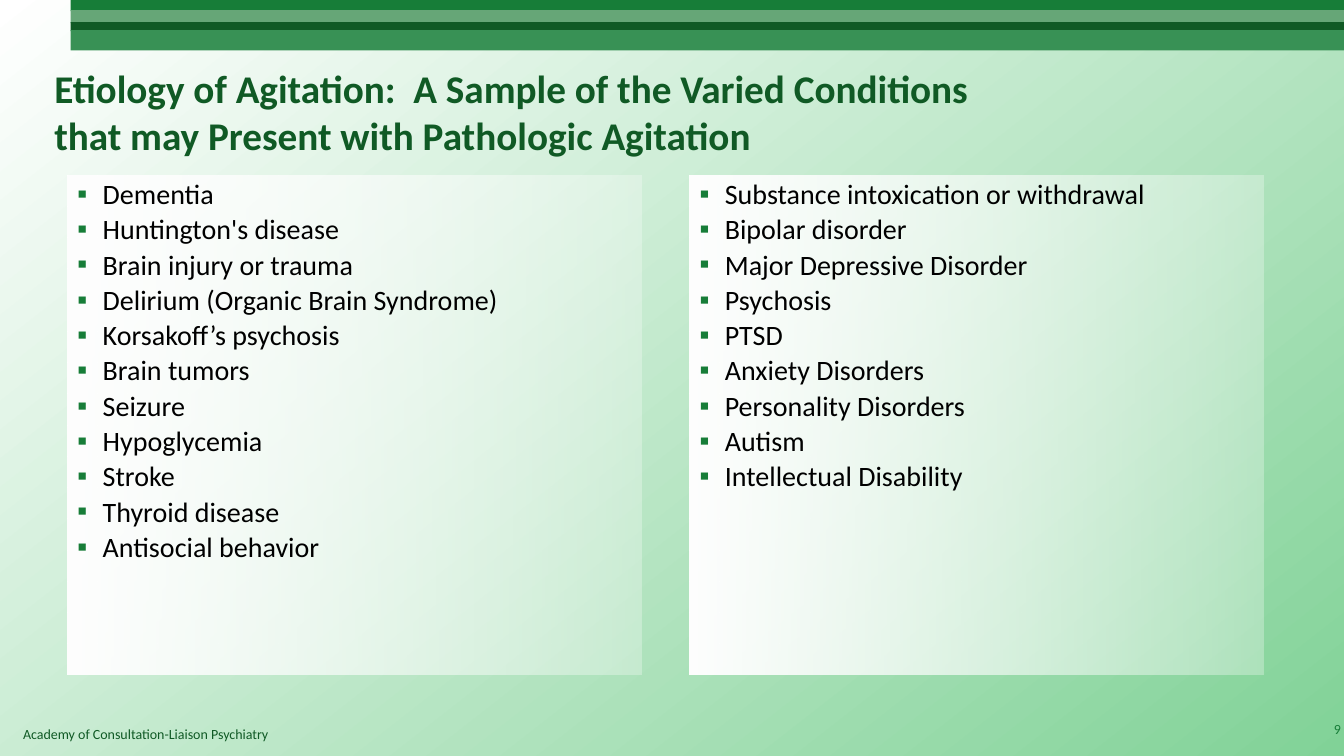
from lxml import etree
from pptx import Presentation
from pptx.dml.color import RGBColor
from pptx.enum.shapes import MSO_SHAPE
from pptx.enum.text import MSO_ANCHOR, PP_ALIGN
from pptx.oxml.ns import qn
from pptx.util import Inches, Pt

RECTANGLE = MSO_SHAPE.RECTANGLE
TOP, MIDDLE = MSO_ANCHOR.TOP, MSO_ANCHOR.MIDDLE
LEFT, RIGHT = PP_ALIGN.LEFT, PP_ALIGN.RIGHT

WHITE = RGBColor(0xFF, 0xFF, 0xFF)
BLACK = RGBColor(0x00, 0x00, 0x00)
MINT = RGBColor(0x81, 0xD2, 0x97)
GREEN = RGBColor(0x17, 0x7D, 0x38)
SAGE = RGBColor(0x66, 0xA6, 0x77)
FOREST = RGBColor(0x10, 0x5A, 0x25)
FERN = RGBColor(0x38, 0x91, 0x55)

FONT = "Calibri"
WIDTH, HEIGHT = 13.33, 7.5
BANNER_LEFT = 0.7
BANDS = [(0, 0.11, GREEN), (0.1, 0.13, SAGE), (0.22, 0.09, FOREST), (0.3, 0.2, FERN)]
PANEL_LEFT, PANEL_TOP, PANEL_WIDTH, PANEL_HEIGHT = 0.67, 1.74, 5.69, 4.95
PANEL_PITCH = 6.17

TITLE = ("Etiology of Agitation:  A Sample of the Varied Conditions\v"
         "that may Present with Pathologic Agitation")
CONDITIONS = [
    ["Dementia", "Huntington's disease", "Brain injury or trauma",
     "Delirium (Organic Brain Syndrome)", "Korsakoff’s psychosis", "Brain tumors",
     "Seizure", "Hypoglycemia", "Stroke", "Thyroid disease", "Antisocial behavior"],
    ["Substance intoxication or withdrawal", "Bipolar disorder",
     "Major Depressive Disorder", "Psychosis", "PTSD", "Anxiety Disorders",
     "Personality Disorders", "Autism", "Intellectual Disability"],
]


def set_gradient(fill, start, end, angle):
    """Fill with a two-colour gradient at a counter-clockwise angle."""
    fill.gradient()
    fill.gradient_angle = angle
    for stop, color in zip(fill.gradient_stops, (start, end)):
        stop.color.rgb = color


def set_font(paragraph, size, color, bold=False):
    """Set the font of a whole paragraph."""
    font = paragraph.font
    font.name, font.size, font.bold = FONT, Pt(size), bold
    font.color.rgb = color


def add_rectangle(slide, left, top, width, height):
    """Add a rectangle without outline or shadow."""
    rectangle = slide.shapes.add_shape(
        RECTANGLE, Inches(left), Inches(top), Inches(width), Inches(height))
    rectangle.shadow.inherit = False
    rectangle.line.fill.background()
    return rectangle


def add_label(slide, box, text, size, color, bold=False, align=LEFT, anchor=MIDDLE):
    """Add a one-paragraph text box and return its frame."""
    frame = slide.shapes.add_textbox(*map(Inches, box)).text_frame
    frame.word_wrap = True
    frame.vertical_anchor = anchor
    paragraph = frame.paragraphs[0]
    paragraph.text = text
    paragraph.alignment = align
    set_font(paragraph, size, color, bold)
    return frame


def add_banner(slide, left, width):
    """Stack the green bands along the top edge."""
    for top, height, color in BANDS:
        band = add_rectangle(slide, left, top, width, height)
        band.fill.solid()
        band.fill.fore_color.rgb = color


def add_bullet(paragraph):
    """Give a paragraph a hanging square bullet."""
    properties = paragraph._p.get_or_add_pPr()
    properties.set("marL", str(Inches(0.25)))
    properties.set("indent", str(-Inches(0.25)))
    bullet_color = etree.SubElement(properties, qn("a:buClr"))
    etree.SubElement(bullet_color, qn("a:srgbClr"), val=str(GREEN))
    etree.SubElement(properties, qn("a:buFont"), typeface=FONT)
    etree.SubElement(properties, qn("a:buChar"), char="▪")


def add_panel(slide, left, top, width, height, conditions):
    """Add a fading white panel with a bulleted list of conditions."""
    panel = add_rectangle(slide, left, top, width, height)
    set_gradient(panel.fill, WHITE, WHITE, 0)
    fading_color = list(panel._element.spPr.iter(qn("a:srgbClr")))[-1]
    etree.SubElement(fading_color, qn("a:alpha"), val="30000")
    frame = panel.text_frame
    frame.word_wrap = True
    frame.vertical_anchor = TOP
    for index, condition in enumerate(conditions):
        paragraph = frame.add_paragraph() if index else frame.paragraphs[0]
        paragraph.text = condition
        add_bullet(paragraph)
        paragraph.alignment = LEFT
        paragraph.line_spacing = 0.9
        paragraph.space_before = Pt(3.6 if index else 0)
        set_font(paragraph, 20, BLACK)


def add_footer(slide, top):
    """Add the society name and the page number at the bottom."""
    add_label(slide, (0.13, top + 0.12, 9.25, 0.27),
              "Academy of Consultation-Liaison Psychiatry", 10, FOREST, anchor=TOP)
    page = add_label(slide, (WIDTH - 0.46, top, 0.46, 0.4), "9", 10, GREEN, align=RIGHT)
    page.margin_right = Inches(0.03)


def main():
    """Build the slide and save it."""
    deck = Presentation()
    deck.slide_width, deck.slide_height = Inches(WIDTH), Inches(HEIGHT)
    slide = deck.slides.add_slide(deck.slide_layouts[6])
    set_gradient(slide.background.fill, WHITE, MINT, 308)
    add_banner(slide, BANNER_LEFT, WIDTH - BANNER_LEFT)
    add_label(slide, (0.44, 0.42, 12.56, 1.37), TITLE, 28, FOREST, bold=True)
    for column, conditions in enumerate(CONDITIONS):
        add_panel(slide, PANEL_LEFT + column * PANEL_PITCH, PANEL_TOP,
                  PANEL_WIDTH, PANEL_HEIGHT, conditions)
    add_footer(slide, 7.03)
    deck.save("out.pptx")


if __name__ == "__main__":
    main()
